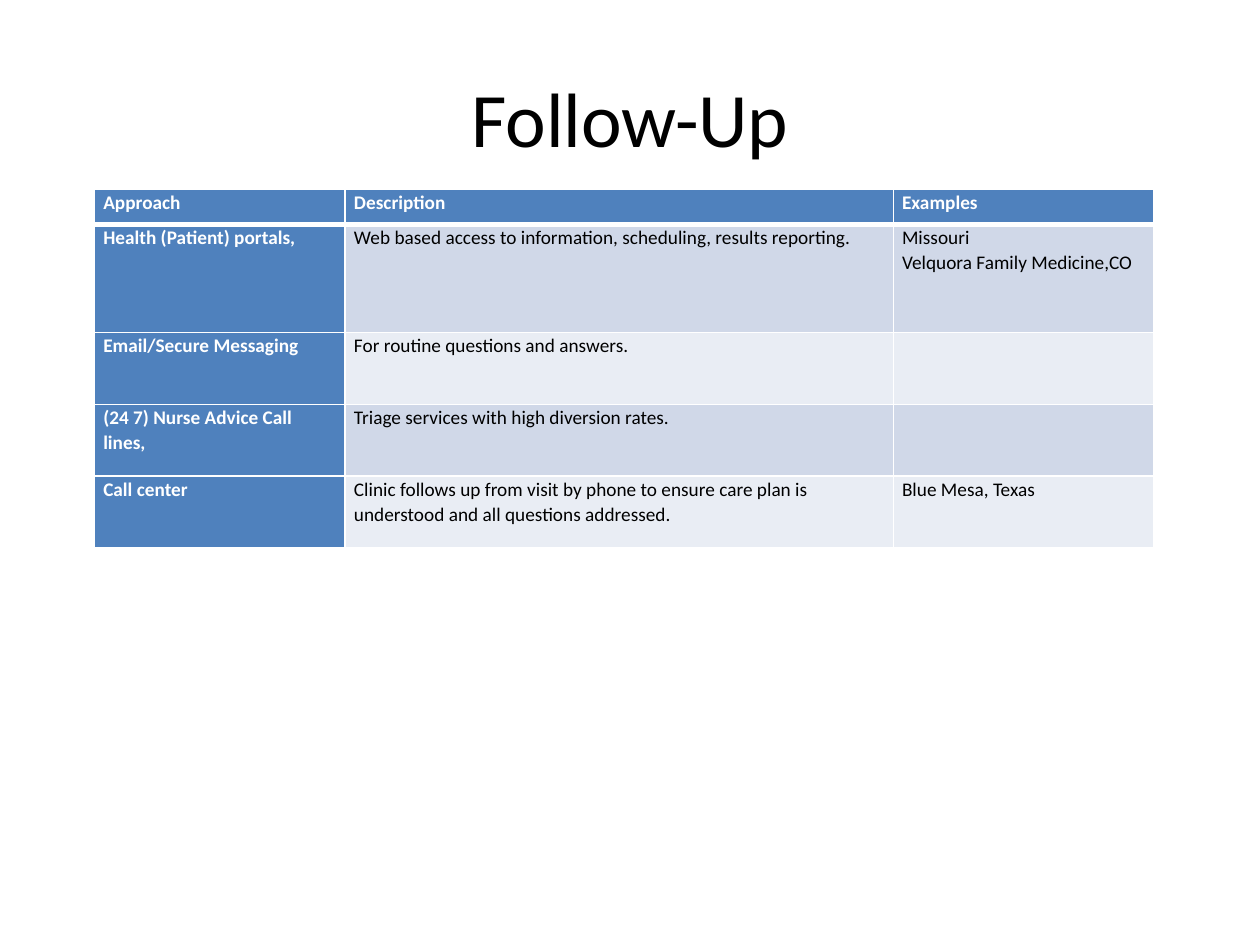
from lxml.etree import SubElement
from pptx import Presentation
from pptx.dml.color import RGBColor
from pptx.enum.text import MSO_ANCHOR, PP_ALIGN
from pptx.oxml.ns import qn
from pptx.util import Inches, Pt

COLORS = {
    "white": "FFFFFF",
    "black": "000000",
    "heading": "4F81BD",
    "odd": "D0D8E8",
    "even": "E9EDF4",
}
FONT = "Calibri"
COLUMN_WIDTHS = [1.99, 4.35, 2.07]
ROW_HEIGHTS = [0.28, 0.86, 0.57, 0.57, 0.57]
FOLLOW_UP = [
    ["Approach", "Description", "Examples"],
    ["Health (Patient) portals,",
     "Web based access to information, scheduling, results reporting.",
     "Missouri\nVelquora Family Medicine,CO"],
    ["Email/Secure Messaging", "For routine questions and answers.", ""],
    ["(24 7) Nurse Advice Call lines,",
     "Triage services with high diversion rates.", ""],
    ["Call center",
     "Clinic follows up from visit by phone to ensure care plan is "
     "understood and all questions addressed.",
     "Blue Mesa, Texas"],
]


def color(name):
    return RGBColor.from_string(COLORS[name])


def add_span(para, text, size, shade, bold=False):
    span = para.add_run()
    span.text = text
    span.font.name = FONT
    span.font.size = Pt(size)
    span.font.bold = bold
    span.font.color.rgb = color(shade)


def fill_title(page, text):
    box = page.shapes.title
    box.left, box.top = Inches(0.5), Inches(0.3)
    box.width, box.height = Inches(9), Inches(1.25)
    box.text_frame.vertical_anchor = MSO_ANCHOR.MIDDLE
    para = box.text_frame.paragraphs[0]
    para.alignment = PP_ALIGN.CENTER
    add_span(para, text, 44, "black")


def set_borders(cell, widths):
    properties = cell._tc.get_or_add_tcPr()
    for position, (side, width) in enumerate(widths.items()):
        line = SubElement(properties, qn(f"a:ln{side}"), w=str(Pt(width)))
        fill = SubElement(line, qn("a:solidFill"))
        SubElement(fill, qn("a:srgbClr"), val=COLORS["white"])
        properties.insert(position, line)


def fill_cell(cell, text, row, column):
    is_heading = row == 0 or column == 0
    band = "odd" if row % 2 else "even"
    cell.margin_left = cell.margin_right = Inches(0.07)
    cell.margin_top = cell.margin_bottom = 0
    cell.fill.solid()
    cell.fill.fore_color.rgb = color("heading" if is_heading else band)
    set_borders(cell, {"L": 1, "R": 1, "T": 3 if row == 1 else 1,
                       "B": 3 if row == 0 else 1})
    frame = cell.text_frame
    for index, line in enumerate(text.splitlines()):
        para = frame.add_paragraph() if index else frame.paragraphs[0]
        para.line_spacing = 1.07
        add_span(para, line, 11, "white" if is_heading else "black", is_heading)


def add_follow_up_table(page):
    table = page.shapes.add_table(
        len(ROW_HEIGHTS), len(COLUMN_WIDTHS), Inches(0.75), Inches(1.5),
        Inches(sum(COLUMN_WIDTHS)), Inches(sum(ROW_HEIGHTS))).table
    table.first_col = True
    for column, width in zip(table.columns, COLUMN_WIDTHS):
        column.width = Inches(width)
    for row, height in zip(table.rows, ROW_HEIGHTS):
        row.height = Inches(height)
    for row, texts in enumerate(FOLLOW_UP):
        for column, text in enumerate(texts):
            fill_cell(table.cell(row, column), text, row, column)


def main():
    deck = Presentation()
    deck.slide_width, deck.slide_height = Inches(10), Inches(7.5)
    page = deck.slides.add_slide(deck.slide_layouts.get_by_name("Title Only"))
    fill_title(page, "Follow-Up")
    add_follow_up_table(page)
    deck.save("out.pptx")


if __name__ == "__main__":
    main()
